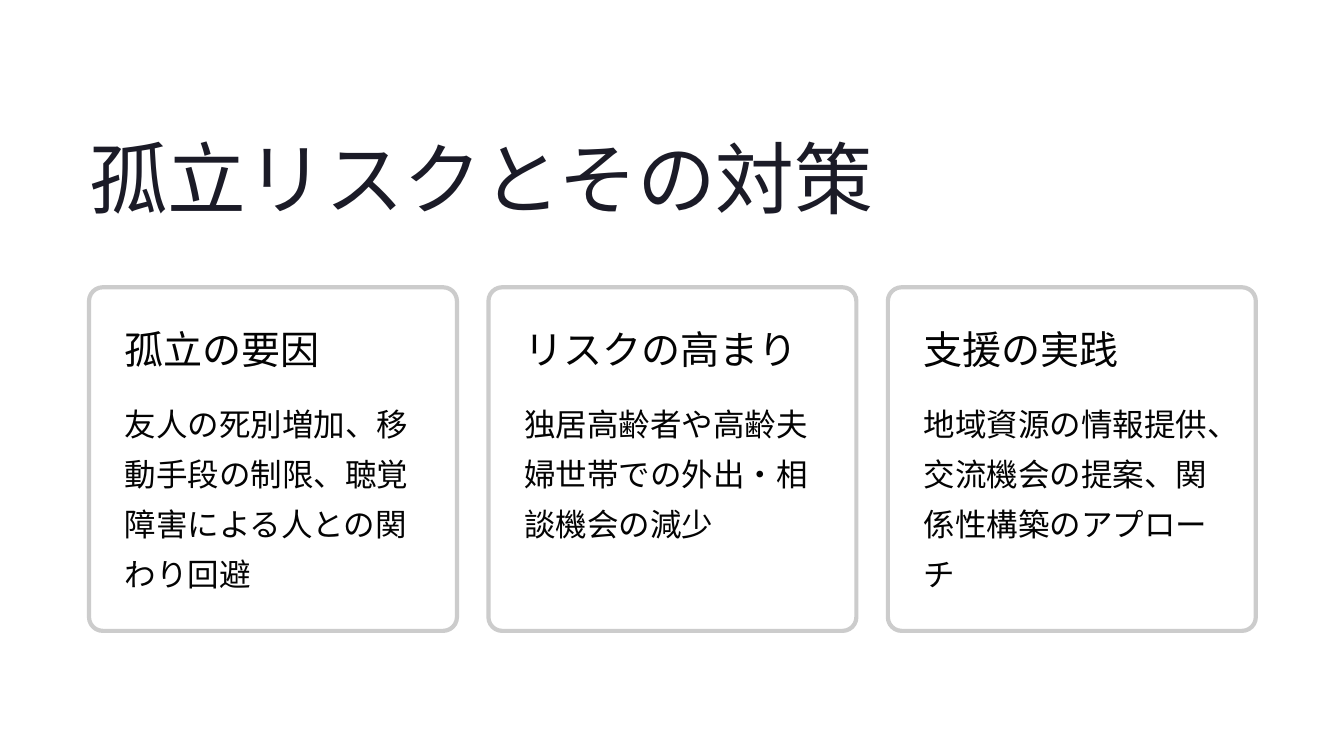
from lxml.etree import SubElement
from pptx import Presentation
from pptx.dml.color import RGBColor
from pptx.enum.shapes import MSO_SHAPE as Shape
from pptx.enum.text import MSO_ANCHOR as Anchor, MSO_AUTO_SIZE as AutoSize, PP_ALIGN as Align
from pptx.oxml.ns import qn
from pptx.util import Inches, Pt

COLORS = {"title": "1B1B27", "text": "030303", "card": "FFFFFF", "border": "CCCCCC"}
LEFT, PITCH, CARD_W = 1.06, 4.755, 4.38
CARD_TOP, CARD_H, PAD = 3.42, 4.09, 0.425
CARDS = [
    ("孤立の要因", "友人の死別増加、移動手段の制限、聴覚障害による人との関わり回避"),
    ("リスクの高まり", "独居高齢者や高齢夫婦世帯での外出・相談機会の減少"),
    ("支援の実践", "地域資源の情報提供、交流機会の提案、関係性構築のアプローチ"),
]


class Deck:
    """Slide style with one method for each kind of element."""

    def __init__(self):
        self.prs = Presentation()
        self.prs.slide_width, self.prs.slide_height = Inches(16), Inches(9)
        self.s = self.prs.slides.add_slide(self.prs.slide_layouts[5])

    def color(self, name):
        return RGBColor.from_string(COLORS[name])

    def style_text(self, sp, text, font, size, leading, color):
        tf = sp.text_frame
        tf.margin_left = tf.margin_top = tf.margin_right = tf.margin_bottom = 0
        tf.word_wrap, tf.auto_size = True, AutoSize.NONE
        tf.vertical_anchor = Anchor.TOP
        tf.text = text
        p = tf.paragraphs[0]
        p.alignment, p.line_spacing = Align.LEFT, Pt(leading)
        r = p.runs[0]
        r.font.name, r.font.size = font, Pt(size)
        r.font.color.rgb = self.color(color)

    def title(self, text, x, y, w, h):
        sp = self.s.shapes.title
        sp.left, sp.top, sp.width, sp.height = map(Inches, (x, y, w, h))
        self.style_text(sp, text, "Inter", 67.5, 84.5, "title")

    def text(self, text, x, y, w, h, font, size, leading):
        sp = self.s.shapes.add_textbox(*map(Inches, (x, y, w, h)))
        self.style_text(sp, text, font, size, leading, "text")

    def panel(self, x, y, w, h):
        sp = self.s.shapes.add_shape(Shape.ROUNDED_RECTANGLE, *map(Inches, (x, y, w, h)))
        sp.shadow.inherit = False
        sp.adjustments[0] = 0.04
        sp.fill.solid()
        sp.fill.fore_color.rgb = self.color("card")
        fill = sp.element.spPr.find(qn("a:solidFill"))
        SubElement(fill[0], qn("a:alpha"), val="95000")
        sp.line.color.rgb = self.color("border")
        sp.line.width = Pt(3.6)

    def card(self, column, heading, body):
        x = LEFT + column * PITCH
        text_w = CARD_W - 2 * PAD
        self.panel(x, CARD_TOP, CARD_W, CARD_H)
        self.text(heading, x + PAD, CARD_TOP + PAD, text_w, 0.59, "Inter", 33.5, 42)
        self.text(body, x + PAD, 4.67, text_w, 2.41, "Lato", 27, 43)


def main():
    deck = Deck()
    deck.title("孤立リスクとその対策", LEFT, 1.49, 9.43, 1.18)
    for column, (heading, body) in enumerate(CARDS):
        deck.card(column, heading, body)
    deck.prs.save("out.pptx")


if __name__ == "__main__":
    main()
